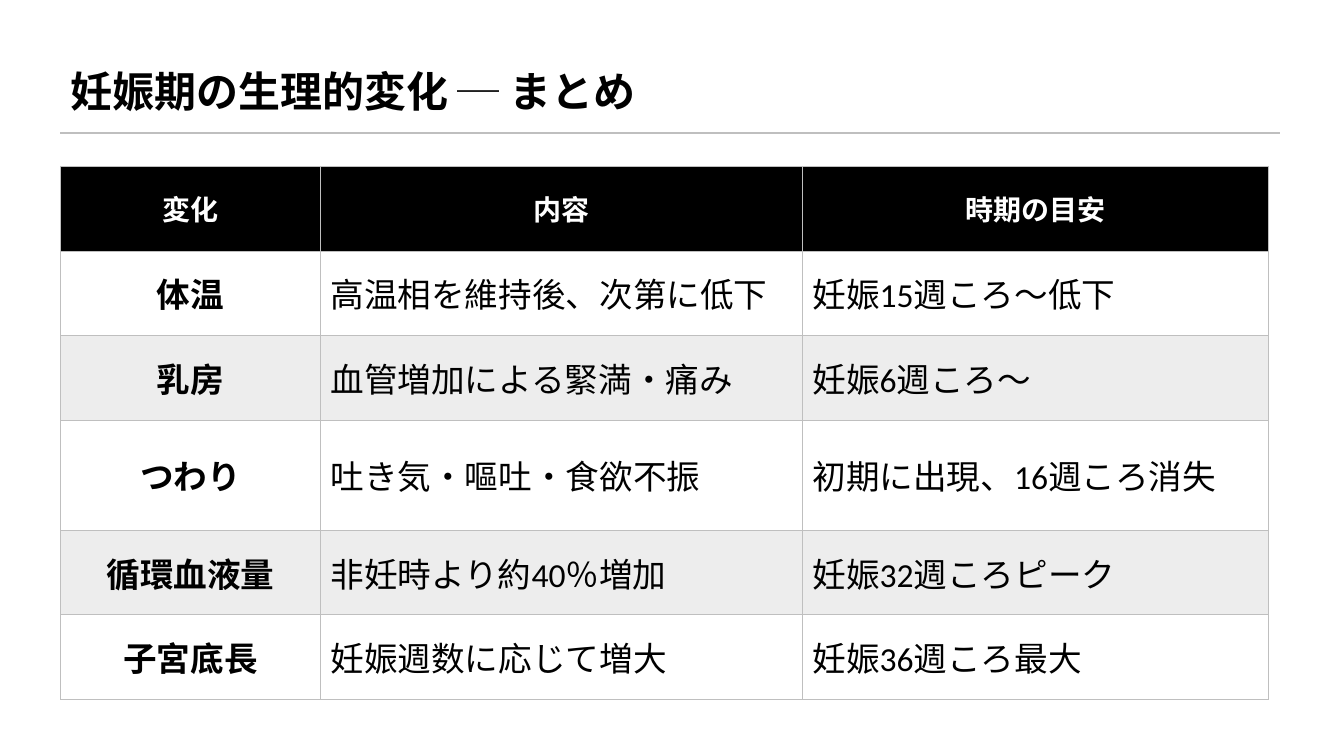
from lxml.etree import SubElement
from pptx import Presentation
from pptx.dml.color import RGBColor
from pptx.enum.shapes import MSO_CONNECTOR as Connector
from pptx.enum.text import MSO_ANCHOR as Anchor, MSO_AUTO_SIZE as AutoSize, PP_ALIGN as Align
from pptx.oxml import parse_xml
from pptx.oxml.ns import nsdecls, qn
from pptx.util import Pt

HEADERS = ["変化", "内容", "時期の目安"]
CHANGES = [
    ["体温", "高温相を維持後、次第に低下", "妊娠15週ころ〜低下"],
    ["乳房", "血管増加による緊満・痛み", "妊娠6週ころ〜"],
    ["つわり", "吐き気・嘔吐・食欲不振", "初期に出現、16週ころ消失"],
    ["循環血液量", "非妊時より約40％増加", "妊娠32週ころピーク"],
    ["子宮底長", "妊娠週数に応じて増大", "妊娠36週ころ最大"],
]
COLUMN_WIDTHS = [185.76, 344.16, 332.64]
ROW_HEIGHTS = [60.48, 60.48, 60.48, 78.48, 60.48, 60.48]


def color(value):
    return RGBColor.from_string(value)


def assign(target, values):
    for name, value in values.items():
        setattr(target, name, value)


class SummarySlide:
    black, white, band, rule = "000000", "FFFFFF", "EDEDED", "BFBFBF"
    japanese, latin = "Noto Sans CJK JP", "Calibri"

    def __init__(self, deck):
        self.page = deck.slides.add_slide(deck.slide_layouts[5])

    def text(self, frame, content, font, size, ink, bold, align):
        para = frame.paragraphs[0]
        para.alignment = align
        span = para.add_run()
        span.text = content
        assign(span.font, {"name": font, "size": Pt(size), "bold": bold})
        span.font.color.rgb = color(ink)
        SubElement(span.font._element, qn("a:ea"), typeface=self.japanese)

    def title(self, content, left, top, width, height):
        box = self.page.shapes.title
        assign(box, {"left": Pt(left), "top": Pt(top),
                     "width": Pt(width), "height": Pt(height)})
        assign(box.text_frame, {"word_wrap": True, "auto_size": AutoSize.NONE,
                                "vertical_anchor": Anchor.MIDDLE})
        self.text(box.text_frame, content, self.japanese, 30, self.black, True, Align.LEFT)

    def line(self, left, right, y):
        line = self.page.shapes.add_connector(
            Connector.STRAIGHT, Pt(left), Pt(y), Pt(right), Pt(y))
        line.line.color.rgb = color(self.rule)
        line.line.width = Pt(1)
        SubElement(line._element.spPr, qn("a:effectLst"))

    def border(self, cell):
        properties = cell._tc.get_or_add_tcPr()
        for index, side in enumerate("LRTB"):
            properties.insert(index, parse_xml(
                f'<a:ln{side} {nsdecls("a")} w="{Pt(0.75)}"><a:solidFill>'
                f'<a:srgbClr val="{self.rule}"/></a:solidFill></a:ln{side}>'))

    def cell(self, cell, content, row, column):
        header = row == 0
        fill = self.black if header else self.white if row % 2 else self.band
        cell.fill.solid()
        cell.fill.fore_color.rgb = color(fill)
        cell.vertical_anchor = Anchor.MIDDLE
        self.border(cell)
        label = header or column == 0
        self.text(cell.text_frame, content, self.latin, 20 if header else 24,
                  self.white if header else self.black, label,
                  Align.CENTER if label else Align.LEFT)

    def table(self, rows, left, top, widths, heights):
        table = self.page.shapes.add_table(
            len(rows), len(widths), Pt(left), Pt(top),
            Pt(sum(widths)), Pt(sum(heights))).table
        table.horz_banding = False
        for column, width in zip(table.columns, widths):
            column.width = Pt(width)
        for row, height in zip(table.rows, heights):
            row.height = Pt(height)
        for row, contents in enumerate(rows):
            for column, content in enumerate(contents):
                self.cell(table.cell(row, column), content, row, column)


def main():
    deck = Presentation()
    assign(deck, {"slide_width": Pt(960), "slide_height": Pt(540)})
    summary = SummarySlide(deck)
    summary.title("妊娠期の生理的変化 ─ まとめ", 43.2, 32.4, 871.2, 64.8)
    summary.line(43.2, 914.4, 95.04)
    summary.table([HEADERS] + CHANGES, 43.2, 118.8, COLUMN_WIDTHS, ROW_HEIGHTS)
    deck.save("out.pptx")


if __name__ == "__main__":
    main()
